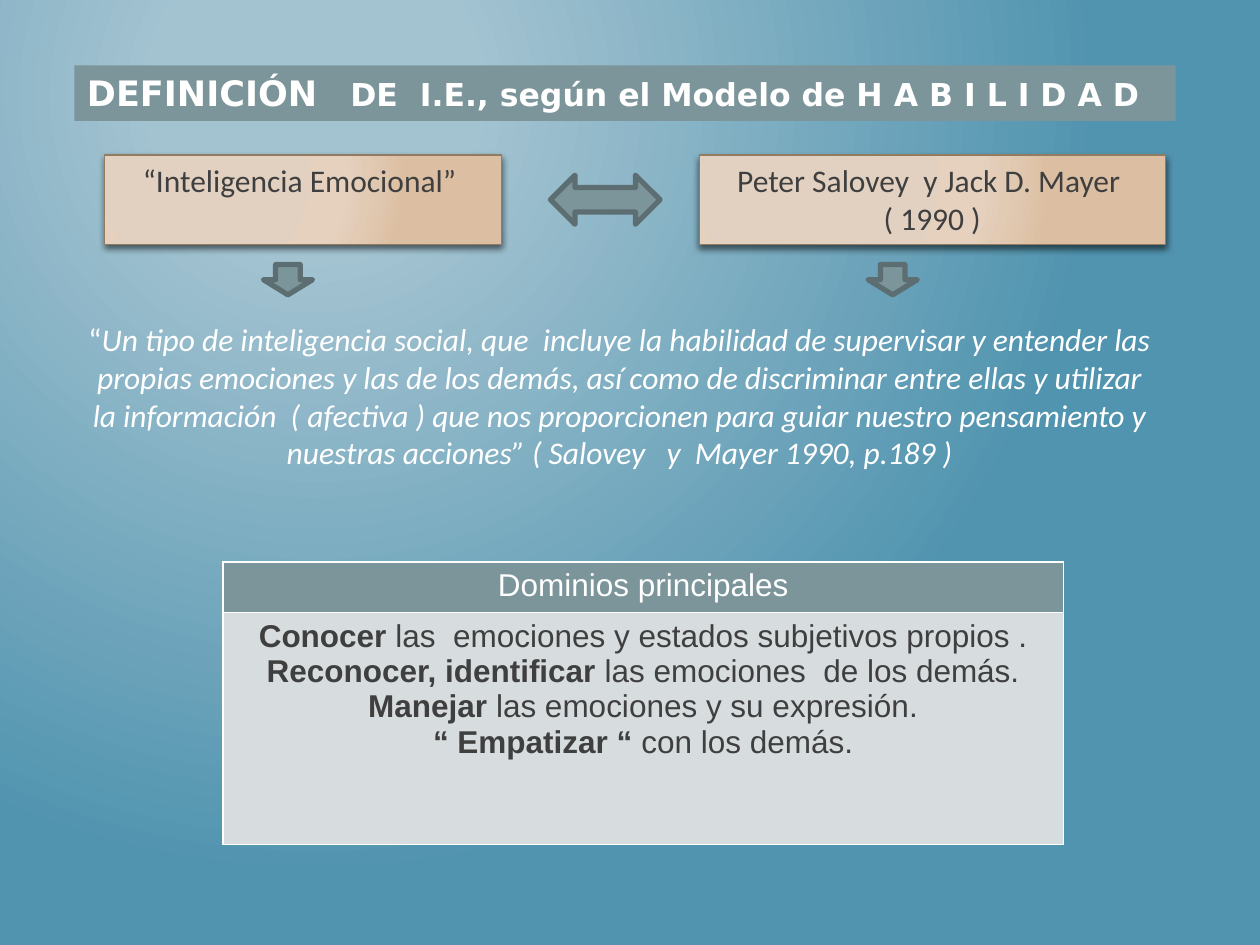
from lxml.etree import SubElement
from pptx import Presentation
from pptx.dml.color import RGBColor
from pptx.enum.shapes import MSO_SHAPE as SHAPE
from pptx.enum.text import MSO_ANCHOR as ANCHOR, MSO_AUTO_SIZE as AUTO, PP_ALIGN as ALIGN
from pptx.oxml import parse_xml
from pptx.oxml.ns import nsdecls, qn
from pptx.util import Pt

WHITE, DARK, GRAY, GRAY_LINE = "FFFFFF", "3F3F3F", "7C959A", "5C6E72"
PALE, CARD_LINE = "D7DDDE", "927C61"

# Runs are (text, font settings)
TITLE = [("DEFINICIÓN", {"size": 20}),
         ("   DE  I.E., según el Modelo de H A B I L I D A D", {})]
CARDS = [  # left, width, lines
    (59.8, 226.8, ["“Inteligencia Emocional” "]),
    (399.6, 266.4, ["Peter Salovey  y Jack D. Mayer ", "( 1990 )"]),
]
QUOTE = [("“", {}),
         ("Un tipo de inteligencia social, que  incluye la habilidad de supervisar y "
          "entender las propias emociones y las de los demás, así como de discriminar "
          "entre ellas y utilizar la información  ( afectiva ) que nos proporcionen para "
          "guiar nuestro pensamiento y nuestras acciones” ( Salovey   y  Mayer 1990, p.189 )",
          {"italic": True})]
HEADER = "Dominios principales"
DOMAINS = [
    ("Conocer", " las  emociones y estados subjetivos propios ."),
    ("Reconocer, identificar ", "las emociones  de los demás."),
    ("Manejar ", "las emociones y su expresión."),
    ("“ Empatizar “ ", "con los demás."),
]
ARROWS = [  # preset, left, top, width, height
    (SHAPE.LEFT_RIGHT_ARROW, 314.6, 100.1, 62.6, 28.1),
    (SHAPE.DOWN_ARROW, 496.1, 151.2, 28.1, 17.3),
    (SHAPE.DOWN_ARROW, 150.5, 151.2, 28.1, 17.3),
]
BACKGROUND = [(20, "A3C3D1"), (100, "5194AF")]
CARD_FILL = [(0, "E2D1C1"), (35, "E2D1C1"), (69, "E5D1BE"), (100, "DCBFA2")]


def rgb(value):
    return RGBColor.from_string(value)


def box(*lengths):
    return [Pt(v) for v in lengths]


def write(tf, paragraphs, font, color, align=ALIGN.CENTER, bold=False):
    for i, runs in enumerate(paragraphs):
        p = tf.paragraphs[0] if i == 0 else tf.add_paragraph()
        p.alignment = align
        for text, extra in runs:
            r = p.add_run()
            r.text = text
            f = r.font
            f.name, f.size = font, Pt(extra.get("size", 18))
            f.bold, f.italic = extra.get("bold", bold), extra.get("italic", False)
            f.color.rgb = rgb(color)


def radial_fill(fill, parent, stops, left, top):
    """Replace the fill held by parent with a circular gradient."""
    fill.background()
    gs = "".join(f'<a:gs pos="{pos * 1000}"><a:srgbClr val="{c}"/></a:gs>' for pos, c in stops)
    grad = parse_xml(
        f'<a:gradFill {nsdecls("a")} rotWithShape="1"><a:gsLst>{gs}</a:gsLst>'
        f'<a:path path="circle"><a:fillToRect l="{left * 1000}" t="{top * 1000}" '
        'r="100000" b="100000"/></a:path></a:gradFill>')
    parent.replace(parent.find(qn("a:noFill")), grad)


def add_shape(s, preset, place, line, width):
    sp = s.shapes.add_shape(preset, *box(*place))
    sp.shadow.inherit = False
    sp.line.color.rgb, sp.line.width = rgb(line), Pt(width)
    return sp


def add_card(s, left, width, lines):
    sp = add_shape(s, SHAPE.RECTANGLE, (left, 88.6, width, 51.1), CARD_LINE, 0.75)
    sp_pr = sp._element.spPr
    radial_fill(sp.fill, sp_pr, CARD_FILL, 50, 50)
    shadow = SubElement(sp_pr.find(qn("a:effectLst")), qn("a:outerShdw"),
                        blurRad=str(Pt(4)), dist=str(Pt(2)), dir="5400000", rotWithShape="0")
    color = SubElement(shadow, qn("a:srgbClr"), val="000000")
    SubElement(color, qn("a:alpha"), val="55000")
    sp.text_frame.vertical_anchor = ANCHOR.TOP
    write(sp.text_frame, [[(line, {})] for line in lines], "Calibri", DARK)


def add_domains(s):
    frame = s.shapes.add_table(2, 1, *box(127.4, 321.1, 480.2, 161.3))
    table = frame.table
    rows = [(27, GRAY, WHITE, [[(HEADER, {})]]),
            (132.5, PALE, DARK, [[(key, {"bold": True}), (rest, {})] for key, rest in DOMAINS])]
    for i, (height, fill, color, paragraphs) in enumerate(rows):
        table.rows[i].height = Pt(height)
        cell = table.cell(i, 0)
        write(cell.text_frame, paragraphs, "Arial", color)
        tc_pr = cell._tc.get_or_add_tcPr()
        for side in ("lnL", "lnR", "lnT", "lnB"):
            ln = SubElement(tc_pr, qn(f"a:{side}"), w=str(Pt(1)))
            SubElement(SubElement(ln, qn("a:solidFill")), qn("a:srgbClr"), val=WHITE)
        cell.fill.solid()
        cell.fill.fore_color.rgb = rgb(fill)


def main():
    prs = Presentation()
    prs.slide_width, prs.slide_height = box(720, 540)
    s = prs.slides.add_slide(prs.slide_layouts[5])
    bg_fill = s.background.fill
    radial_fill(bg_fill, s._element.find(".//" + qn("p:bgPr")), BACKGROUND, 50, 20)

    title = s.shapes.title
    title.left, title.top, title.width, title.height = box(42.5, 37.4, 629.3, 31.7)
    title.fill.solid()
    title.fill.fore_color.rgb = rgb(GRAY)
    tf = title.text_frame
    tf.auto_size, tf.vertical_anchor = AUTO.NONE, ANCHOR.TOP
    write(tf, [TITLE], "DejaVu Sans", WHITE, ALIGN.LEFT, bold=True)

    for card in CARDS:
        add_card(s, *card)

    tf = s.shapes.add_textbox(*box(42.5, 179.3, 623.5, 94.3)).text_frame
    tf.word_wrap = True
    write(tf, [QUOTE], "Calibri", WHITE)

    add_domains(s)

    for preset, *place in ARROWS:
        arrow = add_shape(s, preset, place, GRAY_LINE, 3)
        arrow.fill.solid()
        arrow.fill.fore_color.rgb = rgb(GRAY)

    prs.save("out.pptx")


if __name__ == "__main__":
    main()
